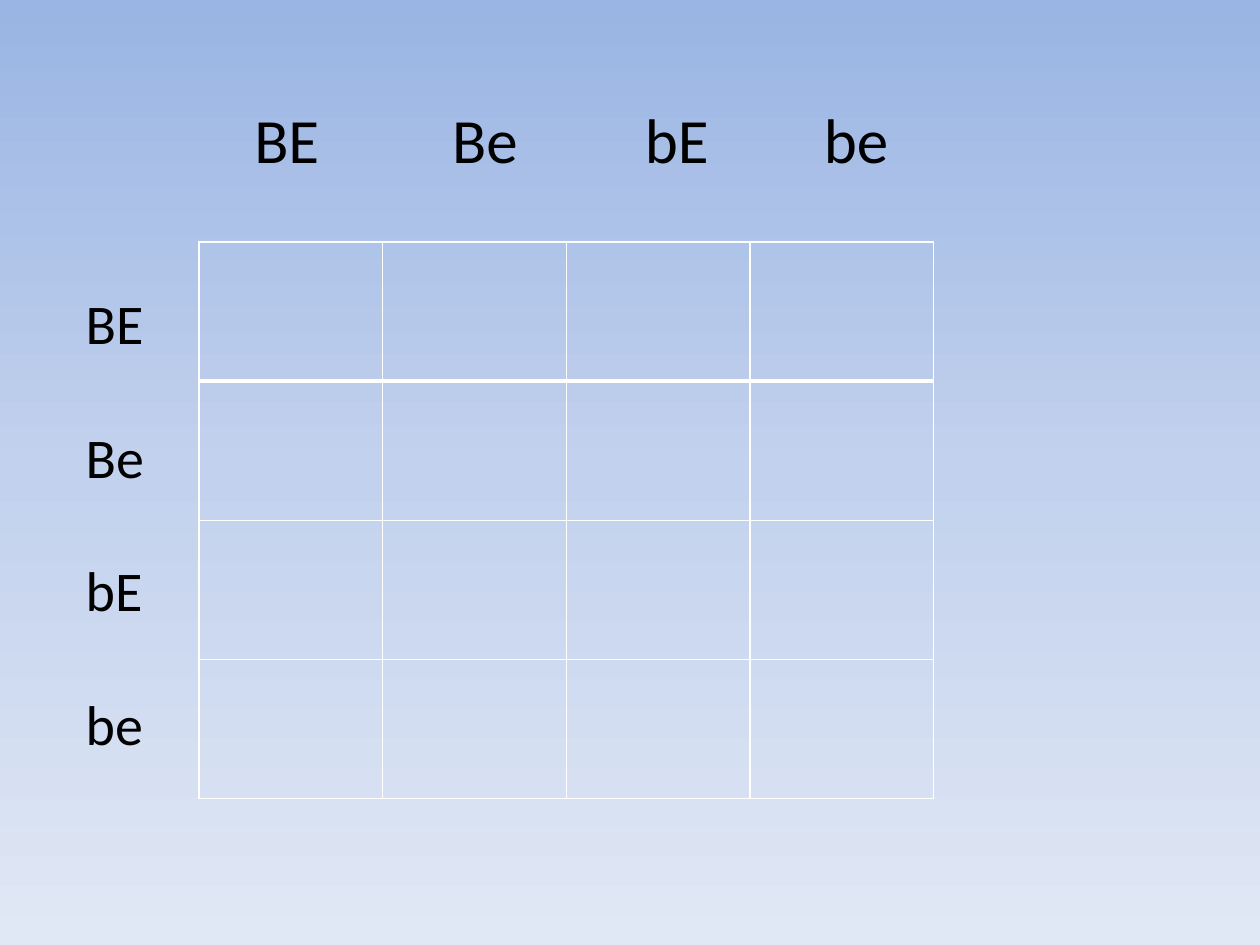
import copy

import pptx
import pptx.dml.color
import pptx.oxml
import pptx.oxml.ns
import pptx.util

Inches = pptx.util.Inches
Pt = pptx.util.Pt
qn = pptx.oxml.ns.qn
GAMETES = ["BE", "Be", "bE", "be"]


def rgb(value):
    return pptx.dml.color.RGBColor.from_string(value)


def add_text(p, text, size=32, color="000000", font="Calibri"):
    r = p.add_run()
    r.text = text
    r.font.size = Pt(size)
    r.font.name = font
    r.font.color.rgb = rgb(color)
    return r


def add_box(s, left, top, width, height):
    sp = s.shapes.add_textbox(Inches(left), Inches(top), Inches(width), Inches(height))
    sp.text_frame.word_wrap = True
    return sp.text_frame


def set_background(s, colors):
    fill = s.background.fill
    fill.gradient()
    fill.gradient_angle = 270
    stops = next(s.element.iter(qn("a:gsLst")))
    stops.append(copy.deepcopy(stops[-1]))
    last = len(colors) - 1
    for i, (stop, color) in enumerate(zip(fill.gradient_stops, colors)):
        stop.position = i / last
        stop.color.rgb = rgb(color)


def set_borders(cell, color="FFFFFF", **widths):
    tc_pr = cell._tc.get_or_add_tcPr()
    for i, side in enumerate("LRTB"):
        ln = pptx.oxml.parse_xml(
            f'<a:ln{side} {pptx.oxml.ns.nsdecls("a")} w="{Pt(widths.get(side, 1))}">'
            f'<a:solidFill><a:srgbClr val="{color}"/></a:solidFill></a:ln{side}>'
        )
        tc_pr.insert(i, ln)


def add_grid(s, left, top, width, height):
    n = len(GAMETES)
    table = s.shapes.add_table(
        n, n, Inches(left), Inches(top), Inches(width), Inches(height)
    ).table
    table.first_row = False
    table.horz_banding = False
    for i in range(n):
        for j in range(n):
            cell = table.cell(i, j)
            cell.fill.background()
            rule = {0: {"B": 3}, 1: {"T": 3}}.get(i, {})
            set_borders(cell, **rule)


def add_column_labels(s, left, top, width, height):
    p = add_box(s, left, top, width, height).paragraphs[0]
    p_pr = p._p.get_or_add_pPr()
    tabs = pptx.oxml.parse_xml(f'<a:tabLst {pptx.oxml.ns.nsdecls("a")}/>')
    for position in (1.57, 3.1, 4.52):
        tab = tabs.makeelement(qn("a:tab"), {"pos": str(Inches(position)), "algn": "l"})
        tabs.append(tab)
    p_pr.append(tabs)
    add_text(p, "\t".join(GAMETES), size=36)


def add_row_labels(s, left, top, width, height):
    tf = add_box(s, left, top, width, height)
    tf.margin_left = Inches(0.18)
    tf.margin_top = Inches(0.12)
    for i, name in enumerate(GAMETES):
        p = tf.paragraphs[0] if i == 0 else tf.add_paragraph()
        p.space_after = Pt(38)
        add_text(p, name)


def main():
    prs = pptx.Presentation()
    prs.slide_width = Inches(10)
    prs.slide_height = Inches(7.5)
    s = prs.slides.add_slide(prs.slide_layouts[6])
    set_background(s, ["9AB5E4", "C2D1ED", "E1E8F5"])
    add_grid(s, 1.58, 1.92, 5.83, 4.42)
    add_column_labels(s, 1.92, 0.75, 5.33, 1.01)
    add_row_labels(s, 0.5, 2.17, 1.33, 4.24)
    prs.save("out.pptx")


if __name__ == "__main__":
    main()
